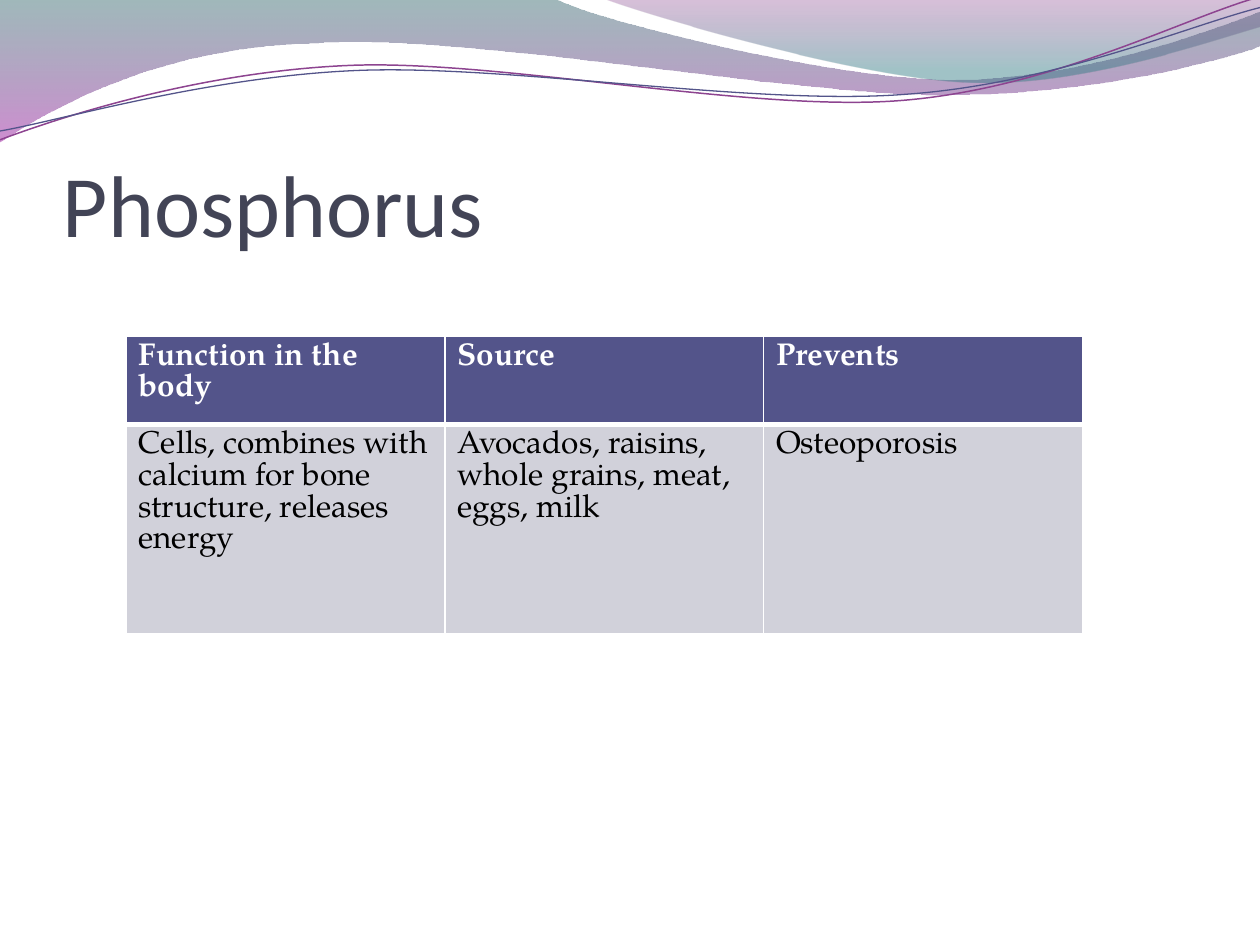
import pptx
import pptx.util
import pptx.dml.color
import pptx.enum.text
import pptx.oxml.ns
import lxml.etree

PX = 9144  # EMU per px, at 100 px to the inch
RGB = pptx.dml.color.RGBColor
WHITE = RGB(0xFF, 0xFF, 0xFF)
BLACK = RGB(0x00, 0x00, 0x00)
SLATE = RGB(0x42, 0x44, 0x56)
INDIGO = RGB(0x53, 0x54, 0x8A)
PALE = RGB(0xD1, 0xD1, 0xDA)
PLUM = RGB(0x8D, 0x44, 0x90)
DEEP_TEAL = RGB(0x2D, 0x63, 0x68)
MAGENTA = RGB(0xA5, 0x30, 0xA9)
PURPLE = RGB(0x7F, 0x2F, 0x82)
TEAL = RGB(0x2F, 0x7B, 0x82)

# Outlines: a pair is a straight step, six numbers are a cubic curve
BROAD_WAVE = [
    (0, 0), (440, -1), (476, 17, 664, 63, 758, 63), (853, 63, 958, 26, 1000, 9),
    (1001, 36), (983, 44, 870, 76, 746, 75), (622, 75, 382, 28, 257, 34),
    (129, 36, 46, 83, -1, 113)]
RIGHT_WAVE = [
    (479, -1), (509, 11, 682, 62, 769, 65), (856, 69, 961, 32, 1000, 21), (1000, 0)]
PLUM_CURVE = [
    (0, 111), (48, 93, 158, 57, 277, 52), (395, 47, 593, 89, 713, 80),
    (833, 71, 938, 15, 998, -2)]
INDIGO_CURVE = [
    (0, 104), (47, 96, 164, 61, 283, 56), (403, 51, 597, 84, 717, 75),
    (836, 67, 941, 21, 1000, 6)]

HEADINGS = ["Function in the body", "Source", "Prevents"]
DETAILS = ["Cells, combines with calcium for bone structure, releases energy",
           "Avocados, raisins, whole grains, meat, eggs, milk",
           "Osteoporosis"]


class SlideBuilder:
    title_font = "Calibri"
    body_font = "TeX Gyre Pagella"

    def __init__(self, page):
        self.page = page

    def outline(self, outline, closed):
        points = [(part[i] * PX, part[i + 1] * PX)
                  for part in outline for i in range(0, len(part), 2)]
        builder = self.page.shapes.build_freeform(*points[0])
        builder.add_line_segments(points[1:], close=closed)
        shape = builder.convert_to_shape()
        shape.shadow.inherit = False
        # Join each three control points into one cubic curve
        steps = iter(list(shape._element.spPr.iter(pptx.oxml.ns.qn("a:lnTo"))))
        for part in outline[1:]:
            step = next(steps)
            if len(part) == 6:
                step.tag = pptx.oxml.ns.qn("a:cubicBezTo")
                for _ in range(2):
                    extra = next(steps)
                    step.append(extra[0])
                    extra.getparent().remove(extra)
        return shape

    def wave(self, outline, stops):
        shape = self.outline(outline, True)
        shape.line.fill.background()
        shape.fill.gradient()
        shape.fill.gradient_angle = 270
        for stop, (position, color, opacity) in zip(shape.fill.gradient_stops, stops):
            stop.position = position
            stop.color.rgb = color
        tags = shape._element.spPr.iter(pptx.oxml.ns.qn("a:srgbClr"))
        for tag, (position, color, opacity) in zip(list(tags), stops):
            alpha = lxml.etree.SubElement(tag, pptx.oxml.ns.qn("a:alpha"))
            alpha.set("val", str(opacity * 1000))

    def curve(self, outline, color, width):
        shape = self.outline(outline, False)
        shape.fill.background()
        shape.line.color.rgb = color
        shape.line.width = pptx.util.Pt(width)

    def style(self, para, font, size, color, bold=False):
        for span in para.runs:
            span.font.name = font
            span.font.size = pptx.util.Pt(size)
            span.font.color.rgb = color
            span.font.bold = bold

    def title(self, text, left, top, width, height):
        box = self.page.shapes.add_textbox(left * PX, top * PX, width * PX, height * PX)
        frame = box.text_frame
        frame.word_wrap = True
        frame.vertical_anchor = pptx.enum.text.MSO_ANCHOR.BOTTOM
        frame.margin_left = frame.margin_right = frame.margin_bottom = 0
        frame.margin_top = 5 * PX
        frame.text = text
        self.style(frame.paragraphs[0], self.title_font, 50, SLATE)

    def borders(self, cell, bottom):
        properties = cell._tc.get_or_add_tcPr()
        for index, (side, width) in enumerate(
                [("lnL", 1), ("lnR", 1), ("lnT", 1), ("lnB", bottom)]):
            line = pptx.oxml.parse_xml(
                f'<a:{side} {pptx.oxml.ns.nsdecls("a")} w="{width * 12700}">'
                f'<a:solidFill><a:srgbClr val="{WHITE}"/></a:solidFill></a:{side}>')
            properties.insert(index, line)

    def table(self, rows, left, top, width, height, row_heights):
        frame = self.page.shapes.add_table(
            len(rows), len(rows[0]), left * PX, top * PX, width * PX, height * PX)
        table = frame.table
        for r, (texts, row_height) in enumerate(zip(rows, row_heights)):
            table.rows[r].height = row_height * PX
            heading = r == 0
            for c, text in enumerate(texts):
                cell = table.cell(r, c)
                cell.text = text
                cell.fill.solid()
                cell.fill.fore_color.rgb = INDIGO if heading else PALE
                self.style(cell.text_frame.paragraphs[0], self.body_font, 18,
                           WHITE if heading else BLACK, heading)
                self.borders(cell, 3 if heading else 1)
        frame.height = height * PX


def main():
    deck = pptx.Presentation()
    deck.slide_width, deck.slide_height = 1000 * PX, 750 * PX
    slide = SlideBuilder(deck.slides.add_slide(deck.slide_layouts[6]))

    # Waves along the top
    slide.wave(BROAD_WAVE, [(0, DEEP_TEAL, 45), (1, MAGENTA, 55)])
    slide.wave(RIGHT_WAVE, [(0, PURPLE, 30), (0.8, TEAL, 45)])
    slide.curve(PLUM_CURVE, PLUM, 0.85)
    slide.curve(INDIGO_CURVE, INDIGO, 0.75)

    # Title and nutrient table; the heading row grows to fit its text
    slide.title("Phosphorus", 50, 77, 900, 125)
    slide.table([HEADINGS, DETAILS], 100, 267, 759, 236, [0, 166])

    deck.save("out.pptx")


if __name__ == "__main__":
    main()
